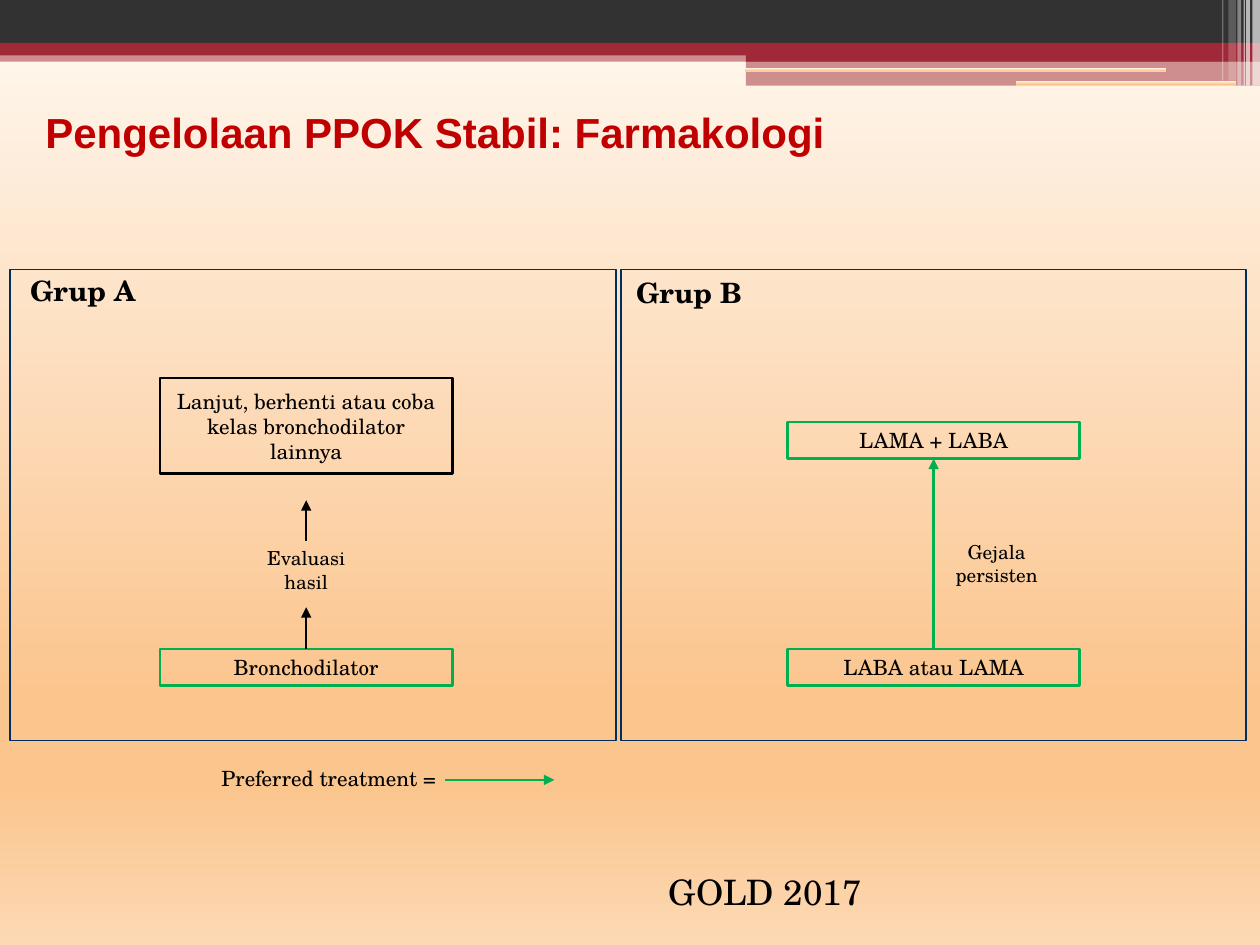
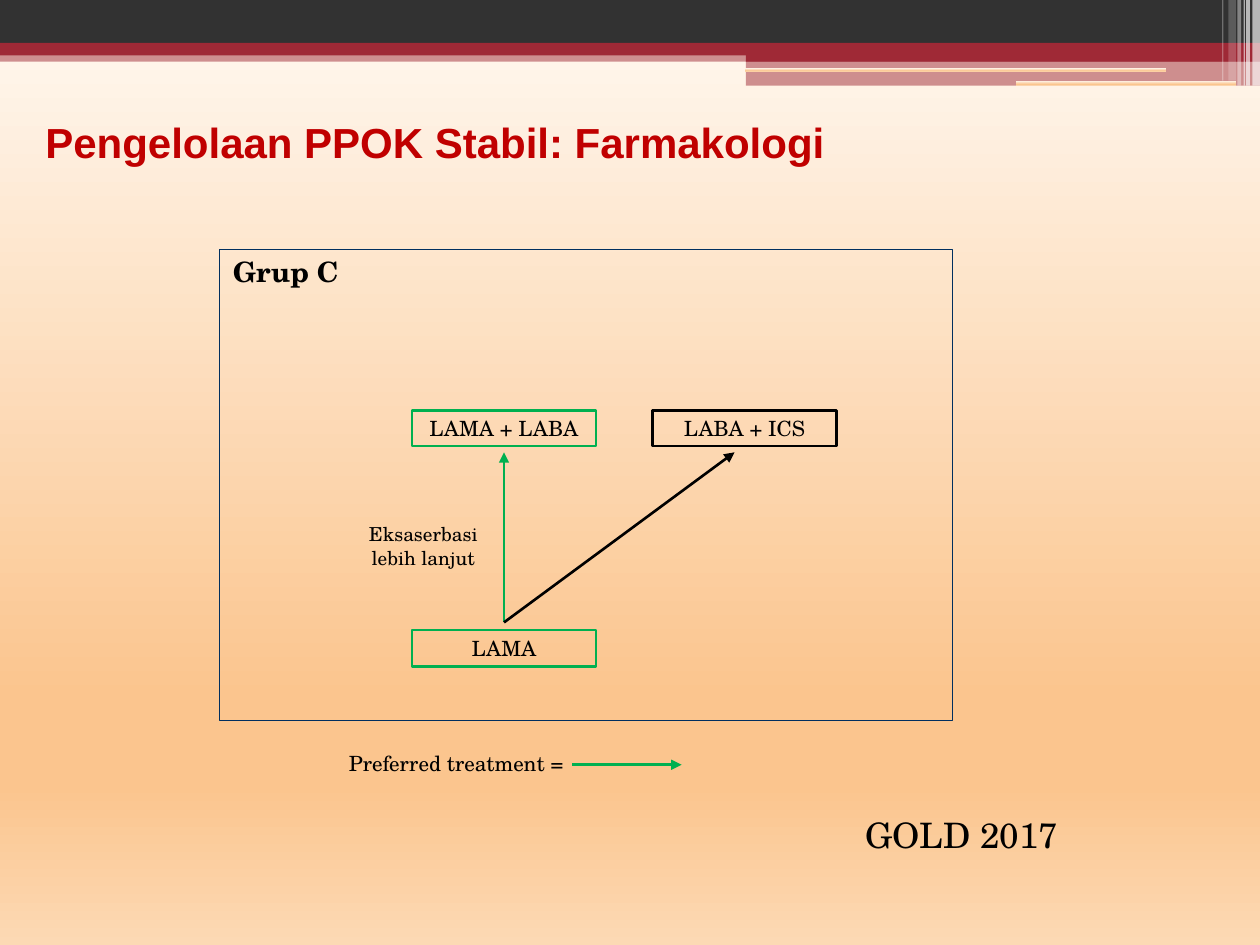
"""Build two slides on drug treatment of stable COPD by group."""
from lxml import etree
from pptx import Presentation
from pptx.dml.color import RGBColor
from pptx.enum.shapes import MSO_CONNECTOR, MSO_SHAPE
from pptx.enum.text import MSO_ANCHOR, MSO_AUTO_SIZE, PP_ALIGN
from pptx.oxml.ns import qn
from pptx.util import Inches, Pt

RECT, ROUND = MSO_SHAPE.RECTANGLE, MSO_SHAPE.ROUNDED_RECTANGLE
LINE = MSO_CONNECTOR.STRAIGHT
LEFT, CENTER = PP_ALIGN.LEFT, PP_ALIGN.CENTER
MIDDLE = MSO_ANCHOR.MIDDLE
NO_FIT = MSO_AUTO_SIZE.NONE

COLORS = {
    "title": "C00000", "text": "000000", "black": "000000", "green": "00B050",
    "navy": "002F5F", "dark": "323232", "red": "9F2936", "white": "FFFFFF",
}
FADE = [(0, "FFF9F2"), (74, "FBC58E"), (83, "FBC58E"), (100, "FCD9B4")]
HEAD_FONT, BODY_FONT = "Arial", "TeX Gyre Schola"
TITLE = "Pengelolaan PPOK Stabil: Farmakologi"

BANDS = [
    (0, 0.4, 10, 0.09, "red", 50),
    (0, 0, 10, 0.34, "dark", 100),
    (0, 0.34, 10, 0.1, "red", 100),
    (5.92, 0.39, 4.08, 0.1, "red", 100),
    (5.92, 0.48, 4.08, 0.2, "red", 50),
]
SLOTS = [(5.91, 0.54, 3.35, 0.03), (8.06, 0.64, 1.75, 0.04)]
STRIPES = [
    (9.94, 0.06, 0.68, 65), (9.89, 0.03, 0.68, 65), (9.87, 0.01, 0.68, 60),
    (9.82, 0.03, 0.68, 40), (9.75, 0.06, 0.64, 20), (9.7, 0.01, 0.64, 30),
]


def color(name):
    return RGBColor.from_string(COLORS[name])


def fade(fill, root):
    fill.gradient()
    fill.gradient_angle = 270
    stops = root.find(".//" + qn("a:gsLst"))
    for stop in list(stops):
        stops.remove(stop)
    for place, tone in FADE:
        stop = etree.SubElement(stops, qn("a:gs"), pos=str(place * 1000))
        etree.SubElement(stop, qn("a:srgbClr"), val=tone)


def block(slide, kind, *area):
    shape = slide.shapes.add_shape(kind, *map(Inches, area))
    shape.shadow.inherit = False
    shape.fill.background()
    shape.line.fill.background()
    return shape


def band(slide, x, y, w, h, tone, alpha):
    shape = block(slide, RECT, x, y, w, h)
    shape.fill.solid()
    shape.fill.fore_color.rgb = color(tone)
    if alpha < 100:
        tint = shape._element.spPr.find(".//" + qn("a:srgbClr"))
        etree.SubElement(tint, qn("a:alpha"), val=str(alpha * 1000))
    return shape


def slot(slide, *area):
    shape = block(slide, ROUND, *area)
    fade(shape.fill, shape._element)
    return shape


def dress(layout, slide):
    """Put the backdrop and top bands on the layout."""
    fade(layout.background.fill, layout._element)
    parts = [band(slide, *row) for row in BANDS]
    parts += [slot(slide, *area) for area in SLOTS]
    parts += [band(slide, x, 0, w, h, "white", alpha)
              for x, w, h, alpha in STRIPES]
    for part in parts:
        layout.shapes._spTree.append(part._element)


def write(frame, text, size, align=LEFT, bold=False, font=BODY_FONT, tone="text"):
    frame.word_wrap = True
    frame.text = text
    para = frame.paragraphs[0]
    para.alignment = align
    para.font.name = font
    para.font.size = Pt(size)
    para.font.bold = bold
    para.font.color.rgb = color(tone)


def head(slide, y):
    title = slide.shapes.title
    title.left, title.top, title.width, title.height = map(
        Inches, (0.26, y, 9.06, 0.73))
    frame = title.text_frame
    write(frame, TITLE, 24, bold=True, font=HEAD_FONT, tone="title")
    frame.vertical_anchor = MIDDLE
    frame.auto_size = NO_FIT


def label(slide, text, area, size, align=LEFT, bold=False):
    box = slide.shapes.add_textbox(*map(Inches, area))
    write(box.text_frame, text, size, align, bold)


def note(slide, text, x, y, w=1.08):
    label(slide, text, (x, y, w, 0.47), 11, CENTER)


def group(slide, text, x, y):
    label(slide, text, (x, y, 1.28, 0.37), 16, bold=True)


def panel(slide, *area):
    shape = block(slide, RECT, *area)
    shape.line.color.rgb = color("navy")
    shape.line.width = Pt(0.75)


def drug(slide, text, x, y, w, h=0.29, tone="green"):
    shape = block(slide, RECT, x, y, w, h)
    shape.line.color.rgb = color(tone)
    shape.line.width = Pt(1.5)
    write(shape.text_frame, text, 12, CENTER)
    shape.text_frame.vertical_anchor = MIDDLE


def arrow(slide, start, end, tone="green"):
    link = slide.shapes.add_connector(LINE, *map(Inches, start + end))
    link.line.color.rgb = color(tone)
    link.line.width = Pt(1.5)
    etree.SubElement(link.line._get_or_add_ln(), qn("a:tailEnd"), type="triangle")
    etree.SubElement(link._element.spPr, qn("a:effectLst"))


def legend(slide, x, y):
    arrow(slide, (x + 1.87, y + 0.16), (x + 2.74, y + 0.16))
    label(slide, "Preferred treatment =", (x, y, 2.24, 0.5), 12)


def source(slide, x, y):
    label(slide, "GOLD 2017", (x, y, 3.7, 0.43), 20)


def first(slide):
    head(slide, 0.68)
    panel(slide, 0.08, 2.14, 4.81, 3.74)
    drug(slide, "Bronchodilator", 1.27, 5.15, 2.32)
    arrow(slide, (2.43, 5.15), (2.43, 4.82), "black")
    note(slide, "Evaluasi hasil", 1.89, 4.29)
    arrow(slide, (2.43, 4.29), (2.43, 3.97), "black")
    drug(slide, "Lanjut, berhenti atau coba kelas bronchodilator lainnya",
         1.27, 3, 2.32, 0.76, "black")
    panel(slide, 4.93, 2.14, 4.96, 3.74)
    drug(slide, "LABA atau LAMA", 6.25, 5.15, 2.32)
    drug(slide, "LAMA + LABA", 6.25, 3.35, 2.32)
    arrow(slide, (7.41, 5.15), (7.41, 3.64))
    note(slide, "Gejala persisten", 7.37, 4.24)
    group(slide, "Grup A", 0.14, 2.12)
    group(slide, "Grup B", 4.95, 2.14)
    legend(slide, 1.66, 6.03)
    source(slide, 5.21, 6.86)


def second(slide):
    head(slide, 0.76)
    drug(slide, "LAMA", 3.27, 5, 1.46)
    drug(slide, "LAMA + LABA", 3.27, 3.26, 1.46, 0.28)
    drug(slide, "LABA + ICS", 5.18, 3.26, 1.46, 0.28, "black")
    arrow(slide, (4, 4.94), (4, 3.59))
    arrow(slide, (4, 4.94), (5.83, 3.59), "black")
    note(slide, "Eksaserbasi lebih lanjut", 2.67, 4.1, 1.38)
    panel(slide, 1.74, 1.98, 5.82, 3.74)
    group(slide, "Grup C", 1.75, 1.97)
    legend(slide, 2.67, 5.91)
    source(slide, 6.77, 6.41)


def main():
    deck = Presentation()
    deck.slide_width, deck.slide_height = Inches(10), Inches(7.5)
    layout = deck.slide_layouts[5]
    slides = [deck.slides.add_slide(layout) for _ in range(2)]
    dress(layout, slides[0])
    first(slides[0])
    second(slides[1])
    deck.save("out.pptx")


if __name__ == "__main__":
    main()
